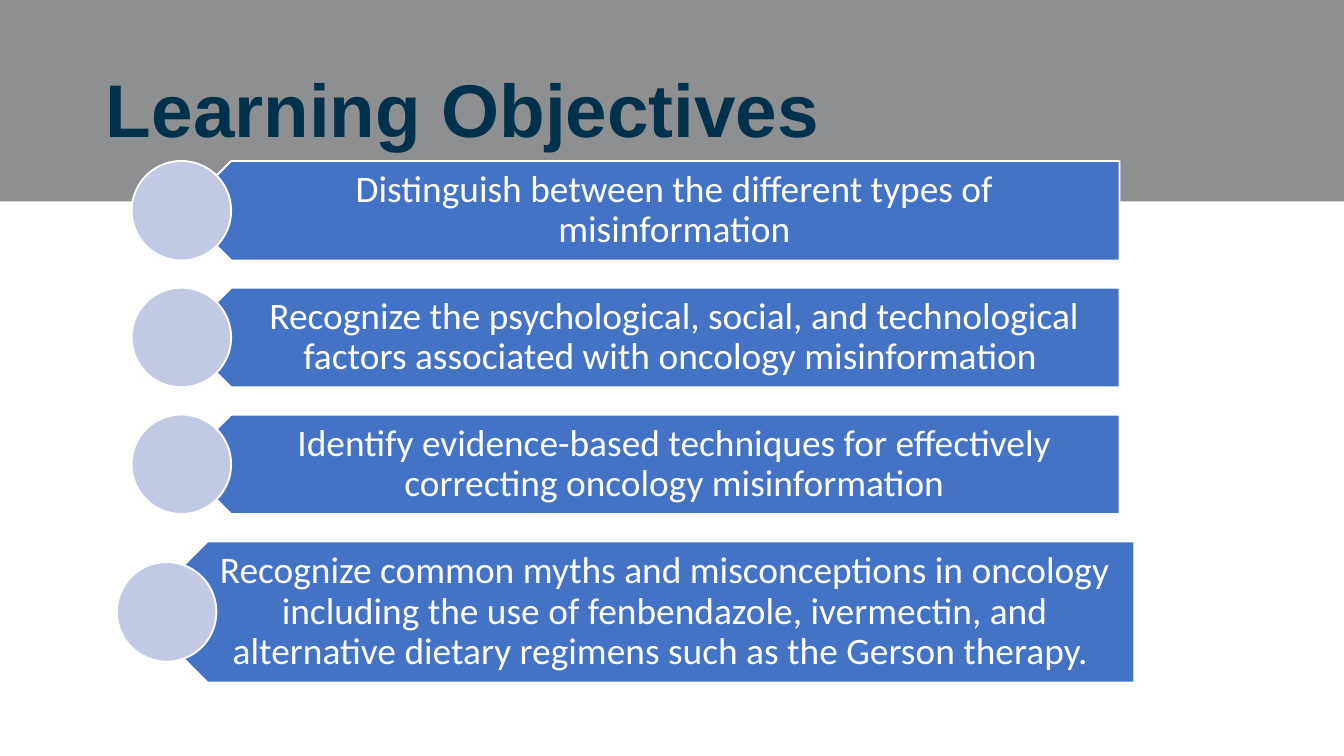
"""Build the Learning Objectives slide."""
from dataclasses import dataclass

from pptx import Presentation
from pptx.dml.color import RGBColor
from pptx.enum.shapes import MSO_SHAPE
from pptx.enum.text import MSO_ANCHOR, PP_ALIGN
from pptx.shapes.autoshape import Shape
from pptx.slide import Slide
from pptx.util import Inches, Pt

RECT, ARROW, OVAL = MSO_SHAPE.RECTANGLE, MSO_SHAPE.PENTAGON, MSO_SHAPE.OVAL
MIDDLE = MSO_ANCHOR.MIDDLE
LEFT, CENTER = PP_ALIGN.LEFT, PP_ALIGN.CENTER

WIDTH = Inches(10)
HEIGHT = WIDTH * 9 // 16
COL, ROW = WIDTH / 100, HEIGHT / 100
TOP, PITCH, DOT = 21.3, 16.77, 13.16


@dataclass(frozen=True)
class Theme:
    """Colours, fonts and type sizes of the slide."""
    band: str = "8D8F91"
    title: str = "00314C"
    bar: str = "4472C4"
    dot: str = "C1C9E4"
    white: str = "FFFFFF"
    head: str = "Arial"
    body: str = "Calibri"
    big: int = 40
    small: int = 20


@dataclass(frozen=True)
class Box:
    """A place on the grid, in columns across and rows down."""
    x: float
    y: float
    wide: float
    high: float

    def emu(self) -> tuple[int, int, int, int]:
        """Return left, top, width and height in EMU."""
        return (round(self.x * COL), round(self.y * ROW),
                round(self.wide * COL), round(self.high * ROW))


@dataclass(frozen=True)
class Goal:
    """One objective with the extent of its bar and the left of its dot."""
    text: str
    x: float = 13.5
    wide: float = 69.8
    high: float = DOT
    dot: float = 9.8


THEME = Theme()
GOALS = (
    Goal("Distinguish between the different types of misinformation"),
    Goal("Recognize the psychological, social, and technological factors "
         "associated with oncology misinformation "),
    Goal("Identify evidence-based techniques for effectively correcting "
         "oncology misinformation"),
    Goal("Recognize common myths and misconceptions in oncology including "
         "the use of fenbendazole, ivermectin, and alternative dietary "
         "regimens such as the Gerson therapy. ",
         x=10.2, wide=74.2, high=18.67, dot=8.7),
)


def add_form(slide: Slide, kind: MSO_SHAPE, box: Box, fill: str,
             line: str | None = None) -> Shape:
    """Draw a filled preset shape, outlined if a line colour is given."""
    form = slide.shapes.add_shape(kind, *box.emu())
    form.shadow.inherit = False
    form.fill.solid()
    form.fill.fore_color.rgb = RGBColor.from_string(fill)
    if line:
        form.line.color.rgb = RGBColor.from_string(line)
        form.line.width = Pt(1)
    else:
        form.line.fill.background()
    return form


def add_text(slide: Slide, box: Box, text: str, *, font: str, size: int,
             color: str, bold: bool = False, align: PP_ALIGN = LEFT,
             inset: tuple[float, ...] = (0.1, 0.05, 0.1, 0.05)) -> None:
    """Write a wrapped paragraph centred vertically in its box."""
    frame = slide.shapes.add_textbox(*box.emu()).text_frame
    frame.word_wrap = True
    frame.vertical_anchor = MIDDLE
    (frame.margin_left, frame.margin_top,
     frame.margin_right, frame.margin_bottom) = map(Inches, inset)
    para = frame.paragraphs[0]
    para.alignment = align
    para.line_spacing = 0.9
    run = para.add_run()
    run.text = text
    run.font.name = font
    run.font.size = Pt(size)
    run.font.bold = bold
    run.font.color.rgb = RGBColor.from_string(color)


def add_goal(slide: Slide, goal: Goal, y: float) -> None:
    """Draw an objective as a bar pointing left, its text and its dot."""
    bar = Box(goal.x, y, goal.wide, goal.high)
    add_form(slide, ARROW, bar, THEME.bar, THEME.white).rotation = 180
    tip = goal.high * ROW / COL / 4
    add_text(slide, Box(goal.x + tip, y, goal.wide - tip, goal.high),
             goal.text, font=THEME.body, size=THEME.small,
             color=THEME.white, align=CENTER,
             inset=(0.33, 0.08, 0.16, 0.08))
    dot = Box(goal.dot, y + (goal.high - DOT) / 2, DOT * ROW / COL, DOT)
    add_form(slide, OVAL, dot, THEME.dot, THEME.white)


def main() -> None:
    """Build the slide and save it."""
    deck = Presentation()
    deck.slide_width, deck.slide_height = WIDTH, HEIGHT
    slide = deck.slides.add_slide(deck.slide_layouts[6])
    add_form(slide, RECT, Box(0, 0, 100, 26.67), THEME.band)
    add_text(slide, Box(6.9, 8.71, 86.2, 12.62), "Learning Objectives",
             font=THEME.head, size=THEME.big, color=THEME.title, bold=True)
    for i, goal in enumerate(GOALS):
        add_goal(slide, goal, TOP + i * PITCH)
    deck.save("out.pptx")


if __name__ == "__main__":
    main()
